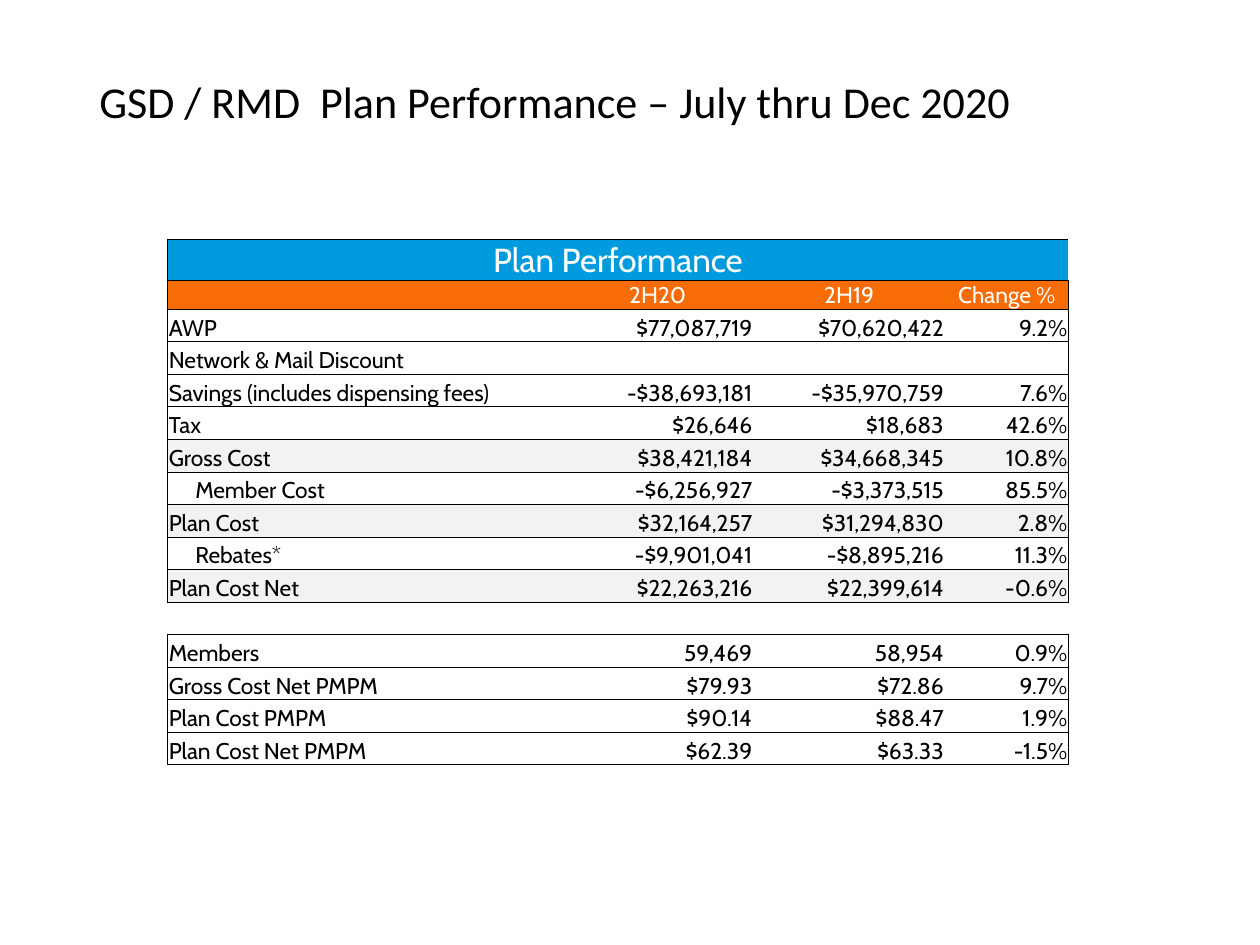
from collections import namedtuple
from dataclasses import dataclass

from lxml import etree
from pptx import Presentation
from pptx.dml.color import RGBColor
from pptx.enum.text import MSO_ANCHOR, PP_ALIGN
from pptx.oxml.ns import qn
from pptx.util import Inches, Pt

LEFT, CENTER, RIGHT = PP_ALIGN.LEFT, PP_ALIGN.CENTER, PP_ALIGN.RIGHT
TOP, MIDDLE, BOTTOM = MSO_ANCHOR.TOP, MSO_ANCHOR.MIDDLE, MSO_ANCHOR.BOTTOM
PLAIN_TABLE_STYLE = "{2D5ABB26-0587-4C30-8999-92F81FD0307C}"

Box = namedtuple("Box", "left top width height")
Line = namedtuple("Line", "label figures span shaded indent edges", defaults=((), 1, False, 0, "LRTB"))


@dataclass(frozen=True)
class Theme:
    ink: str = "000000"
    paper: str = "FFFFFF"
    banner: str = "009BDF"
    header: str = "F86C06"
    subtotal: str = "F2F2F2"
    heading_font: str = "Calibri"
    table_font: str = "Cabin"
    heading_size: float = 25.2
    banner_size: float = 19
    body_size: float = 13
    empty_size: float = 8
    rule_width: float = 0.5


THEME = Theme()
SLIDE_WIDTH, SLIDE_HEIGHT = 10, 7.5
TITLE_BOX = Box(0.69, 0.64, 8.62, 0.99)
TABLE_BOX = Box(1.33, 1.71, 7.15, 4.76)
COLUMN_SHARES = [1.85, 0.64, 0.64, 1.52, 1.52, 0.98]
FIRST_FIGURE = 3
INDENT = 0.21

PERIODS = ("2H20", "2H19", "Change %")
COSTS = [
    Line("AWP", ("$77,087,719", "$70,620,422", "9.2%")),
    Line("Network & Mail Discount", span=2, edges="LRT"),
    Line("Savings (includes dispensing fees)", ("-$38,693,181", "-$35,970,759", "7.6%"), span=3, edges="LRB"),
    Line("Tax", ("$26,646", "$18,683", "42.6%")),
    Line("Gross Cost", ("$38,421,184", "$34,668,345", "10.8%"), shaded=True),
    Line("Member Cost", ("-$6,256,927", "-$3,373,515", "85.5%"), indent=INDENT),
    Line("Plan Cost", ("$32,164,257", "$31,294,830", "2.8%"), shaded=True),
    Line("Rebates*", ("-$9,901,041", "-$8,895,216", "11.3%"), indent=INDENT),
    Line("Plan Cost Net", ("$22,263,216", "$22,399,614", "-0.6%"), shaded=True),
]
PER_MEMBER = [
    Line("Members", ("59,469", "58,954", "0.9%")),
    Line("Gross Cost Net PMPM", ("$79.93", "$72.86", "9.7%")),
    Line("Plan Cost PMPM", ("$90.14", "$88.47", "1.9%")),
    Line("Plan Cost Net PMPM", ("$62.39", "$63.33", "-1.5%")),
]
BODY = COSTS + [Line("", edges="")] + PER_MEMBER
BANNER_ROW, HEADER_ROW, BODY_ROW = 1, 2, 3
ROW_SHARES = [0.19, 0.33, 0.23] + [0.26] * len(BODY) + [0.2, 0.2]


def write(frame, text, *, font=THEME.table_font, size=THEME.body_size,
          color=THEME.ink, align=LEFT, spacing=None):
    paragraph = frame.paragraphs[0]
    paragraph.alignment = align
    paragraph.line_spacing = spacing
    run = paragraph.add_run()
    run.text = text
    run.font.name = font
    run.font.size = Pt(size)
    run.font.color.rgb = RGBColor.from_string(color)


def rule_edges(cell, edges):
    properties = cell._tc.get_or_add_tcPr()
    for edge in edges:
        rule = etree.SubElement(properties, qn(f"a:ln{edge}"), w=str(Pt(THEME.rule_width)))
        fill = etree.SubElement(rule, qn("a:solidFill"))
        etree.SubElement(fill, qn("a:srgbClr"), val=THEME.ink)


def style_row(cells, edges="", fill=None, anchor=BOTTOM):
    last = len(cells) - 1
    for column, cell in enumerate(cells):
        cell.margin_left = cell.margin_right = cell.margin_top = Inches(0.01)
        cell.margin_bottom = 0
        cell.vertical_anchor = anchor
        hidden = {"L"} if column else set()
        if column != last:
            hidden.add("R")
        rule_edges(cell, [edge for edge in edges if edge not in hidden])
        if fill:
            cell.fill.solid()
            cell.fill.fore_color.rgb = RGBColor.from_string(fill)
        else:
            cell.fill.background()
        ending = cell.text_frame.paragraphs[0]._p.get_or_add_endParaRPr()
        ending.set("sz", str(int(THEME.empty_size * 100)))


def fill_header(cells):
    style_row(cells, "LRTB", THEME.header, MIDDLE)
    cells[0].merge(cells[FIRST_FIGURE - 1])
    for cell, period in zip(cells[FIRST_FIGURE:], PERIODS):
        write(cell.text_frame, period, color=THEME.paper, align=CENTER)


def fill_line(cells, line):
    style_row(cells, line.edges, THEME.subtotal if line.shaded else None)
    if line.span > 1:
        cells[0].merge(cells[line.span - 1])
    if line.label:
        cells[0].margin_left = Inches(0.01 + line.indent)
        write(cells[0].text_frame, line.label)
    for cell, figure in zip(cells[FIRST_FIGURE:], line.figures):
        write(cell.text_frame, figure, align=RIGHT)


def add_title(slide, box):
    frame = slide.shapes.add_textbox(*map(Inches, box)).text_frame
    frame.word_wrap = True
    frame.vertical_anchor = TOP
    frame.margin_top = 0
    write(frame, "GSD / RMD  Plan Performance – July thru Dec 2020",
          font=THEME.heading_font, size=THEME.heading_size, spacing=0.9)


def add_performance_table(slide, box):
    table = slide.shapes.add_table(len(ROW_SHARES), len(COLUMN_SHARES), *map(Inches, box)).table
    table.first_row = table.horz_banding = False
    table._tbl.tblPr.find(qn("a:tableStyleId")).text = PLAIN_TABLE_STYLE
    for column, share in zip(table.columns, COLUMN_SHARES):
        column.width = Inches(box.width * share / sum(COLUMN_SHARES))
    for row, share in zip(table.rows, ROW_SHARES):
        row.height = Inches(box.height * share / sum(ROW_SHARES))
    grid = [list(row.cells) for row in table.rows]

    banner = grid[BANNER_ROW]
    style_row(banner, "LRTB", THEME.banner, MIDDLE)
    banner[0].merge(banner[-1])
    write(banner[0].text_frame, "Plan Performance", size=THEME.banner_size,
          color=THEME.paper, align=CENTER)
    fill_header(grid[HEADER_ROW])

    body_end = BODY_ROW + len(BODY)
    for cells, line in zip(grid[BODY_ROW:body_end], BODY):
        fill_line(cells, line)
    for cells in grid[:BANNER_ROW] + grid[body_end:]:
        style_row(cells)


def main():
    deck = Presentation()
    deck.slide_width, deck.slide_height = Inches(SLIDE_WIDTH), Inches(SLIDE_HEIGHT)
    slide = deck.slides.add_slide(deck.slide_layouts[6])
    add_title(slide, TITLE_BOX)
    add_performance_table(slide, TABLE_BOX)
    deck.save("out.pptx")


if __name__ == "__main__":
    main()
